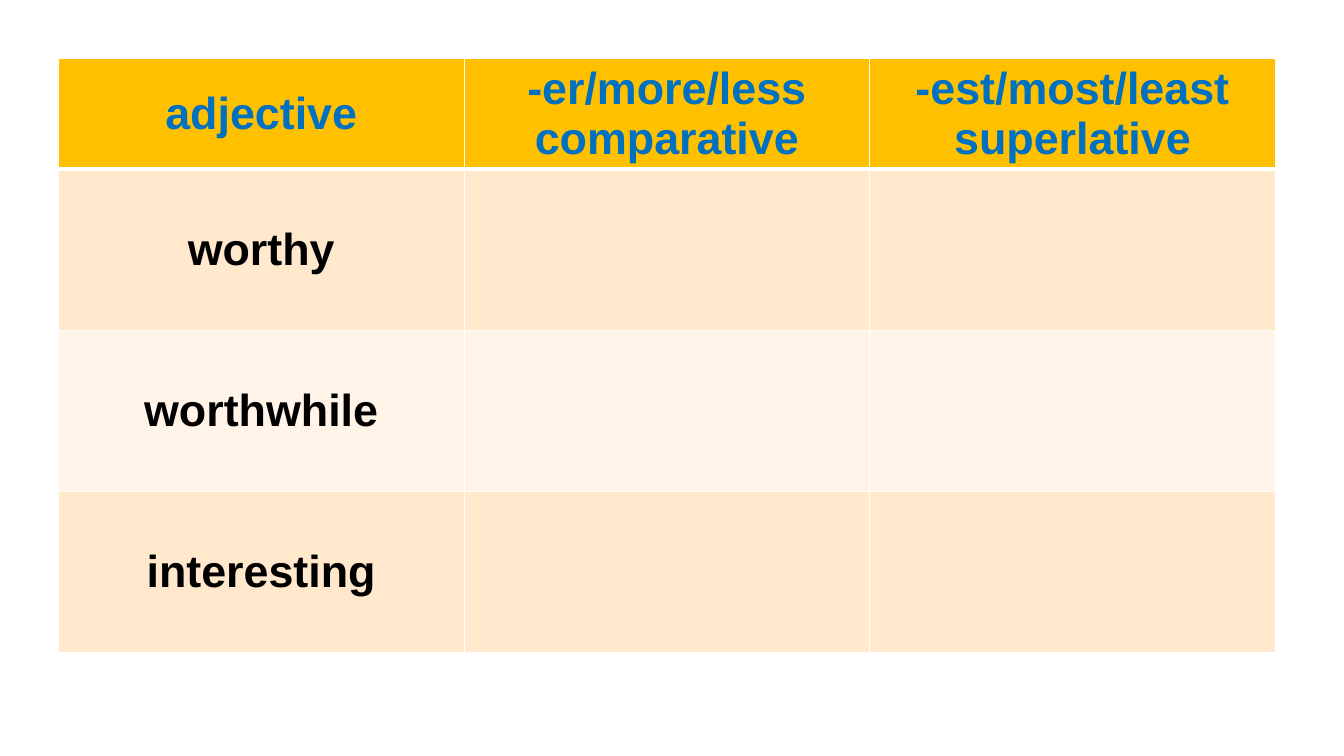
import lxml.etree
import pptx
import pptx.dml.color
import pptx.enum.text
import pptx.oxml.ns
import pptx.util
from pptx.util import Inches

HEADER = ["adjective", "-er/more/less\ncomparative", "-est/most/least\nsuperlative"]
ADJECTIVES = ["worthy", "worthwhile", "interesting"]
BANDS = ["FFE8CC", "FFF4E7"]


def color(hex_value):
    return pptx.dml.color.RGBColor.from_string(hex_value)


def write(tf, text, size=32, font="Arial", fill="000000", bold=True):
    """Write one centred paragraph per line of text."""
    for i, line in enumerate(text.split("\n")):
        p = tf.paragraphs[0] if i == 0 else tf.add_paragraph()
        p.alignment = pptx.enum.text.PP_ALIGN.CENTER
        r = p.add_run()
        r.text = line
        r.font.size = pptx.util.Pt(size)
        r.font.name = font
        r.font.bold = bold
        r.font.color.rgb = color(fill)


def set_borders(cell, widths, line="FFFFFF"):
    """Draw the left, right, top and bottom borders, widths in points."""
    qn = pptx.oxml.ns.qn
    tcPr = cell._tc.get_or_add_tcPr()
    for side, width in zip("LRTB", widths):
        ln = lxml.etree.SubElement(tcPr, qn(f"a:ln{side}"), w=str(pptx.util.Pt(width)))
        solid = lxml.etree.SubElement(ln, qn("a:solidFill"))
        lxml.etree.SubElement(solid, qn("a:srgbClr"), val=line)


def format_cell(cell, fill, widths):
    set_borders(cell, widths)
    cell.fill.solid()
    cell.fill.fore_color.rgb = color(fill)
    cell.vertical_anchor = pptx.enum.text.MSO_ANCHOR.MIDDLE


def add_adjective_table(s):
    rows, cols = len(ADJECTIVES) + 1, len(HEADER)
    table = s.shapes.add_table(rows, cols, Inches(0.58), Inches(0.58),
                               Inches(12.07), Inches(5.89)).table

    # Row heights
    for i, row in enumerate(table.rows):
        row.height = Inches(1.6 if i else 1.09)

    # Header row, with a thicker line below it
    for cell, text in zip(table.rows[0].cells, HEADER):
        format_cell(cell, "FFC000", (1, 1, 1, 3))
        write(cell.text_frame, text, fill="0070C0")

    # Banded rows, with the forms left blank to fill in
    for i, adjective in enumerate(ADJECTIVES):
        cells = list(table.rows[i + 1].cells)
        for cell in cells:
            format_cell(cell, BANDS[i % 2], (1, 1, 1 if i else 3, 1))
        write(cells[0].text_frame, adjective)


def main():
    prs = pptx.Presentation()
    prs.slide_width, prs.slide_height = Inches(13.33), Inches(7.5)
    s = prs.slides.add_slide(prs.slide_layouts[6])
    add_adjective_table(s)
    prs.save("out.pptx")


if __name__ == "__main__":
    main()
